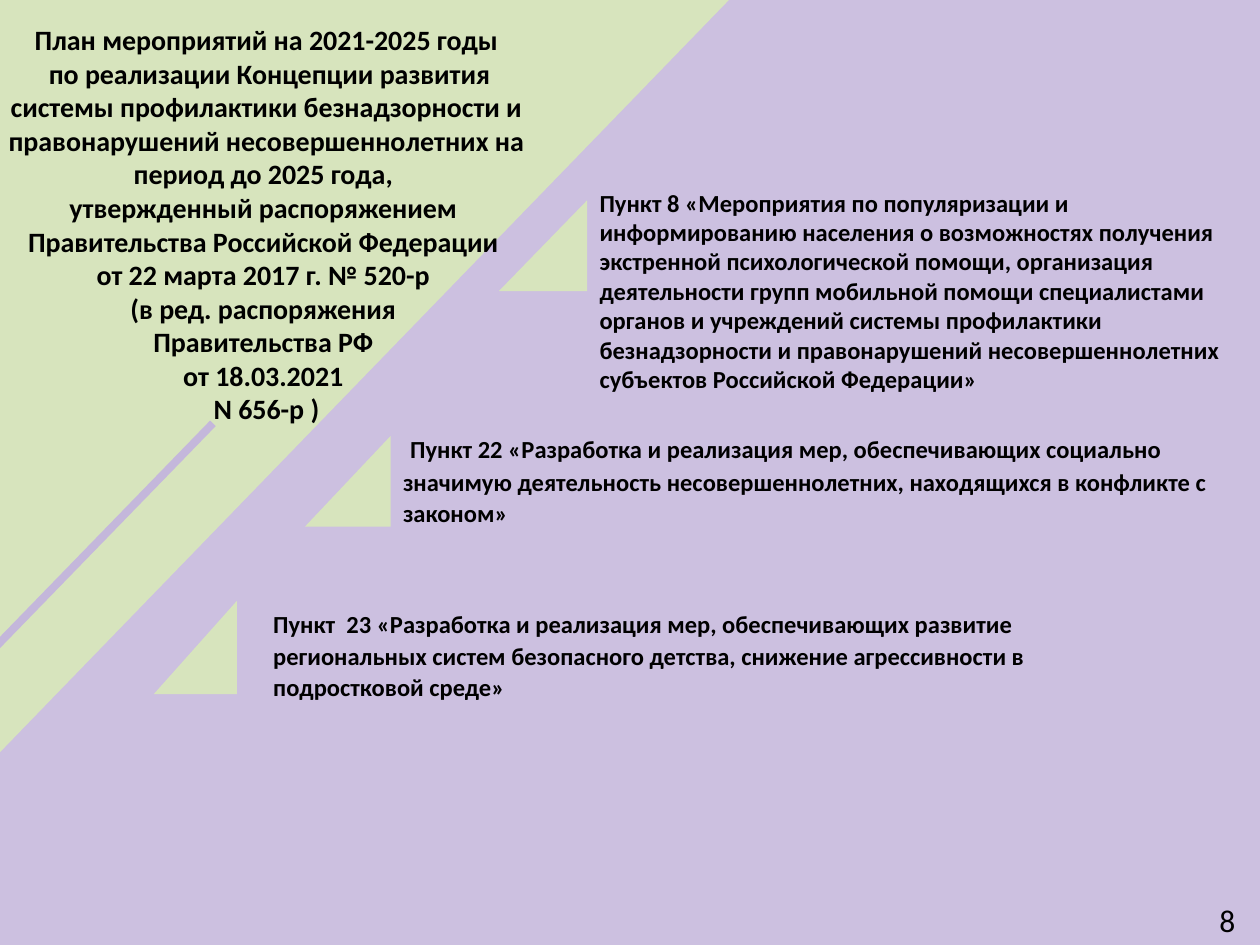
import dataclasses
import typing

import lxml.etree
import pptx
import pptx.dml.color
import pptx.enum.shapes
import pptx.enum.text
import pptx.oxml.ns
import pptx.util

LILAC = pptx.dml.color.RGBColor(0xCC, 0xC0, 0xE0)
VIOLET = pptx.dml.color.RGBColor(0xC4, 0xB7, 0xDB)
GREEN = pptx.dml.color.RGBColor(0xD7, 0xE4, 0xBD)
BLACK = pptx.dml.color.RGBColor(0, 0, 0)
FONT = "Calibri"

WIDTH = pptx.util.Inches(10)
HEIGHT = pptx.util.Inches(7.5)
COLUMNS, ROWS = 100, 75


@dataclasses.dataclass(frozen=True)
class Area:
    column: float
    row: float
    columns: float
    rows: float

    def box(self) -> tuple[int, int, int, int]:
        return (across(self.column), down(self.row),
                across(self.columns), down(self.rows))


@dataclasses.dataclass(frozen=True)
class Triangle:
    area: Area
    apex: float = 1
    rotation: float = 0


@dataclasses.dataclass(frozen=True)
class Passage:
    area: Area
    paragraphs: tuple[str, ...]
    size: int = 14
    bold: bool = True
    wrap: bool = True
    centred: bool = False
    leading: typing.Optional[int] = None
    indent_size: typing.Optional[int] = None


def across(columns: float) -> int:
    return round(WIDTH * columns / COLUMNS)


def down(rows: float) -> int:
    return round(HEIGHT * rows / ROWS)


TRIANGLES = (
    Triangle(Area(-28.1, -6.2, 83.8, 42.4), apex=0.51, rotation=314.1),
    Triangle(Area(39.6, 15.9, 7, 7.2)),
    Triangle(Area(24.2, 34.6, 6.8, 7.2)),
    Triangle(Area(12.2, 47.7, 6.6, 7.4)),
)

PASSAGES = (
    Passage(
        Area(46.6, 14.4, 53.5, 17.5),
        ("Пункт 8 «Мероприятия по популяризации и информированию населения "
         "о возможностях получения экстренной психологической помощи, "
         "организация деятельности групп мобильной помощи специалистами "
         "органов и учреждений системы профилактики безнадзорности и "
         "правонарушений несовершеннолетних субъектов Российской Федерации»",),
    ),
    Passage(
        Area(31, 33.9, 68.1, 8.6),
        ("Пункт 22 «Разработка и реализация мер, обеспечивающих социально "
         "значимую деятельность несовершеннолетних, находящихся в конфликте "
         "с законом»",),
        leading=18,
        indent_size=18,
    ),
    Passage(
        Area(20.7, 47.7, 69.3, 8.6),
        ("Пункт  23 «Разработка и реализация мер, обеспечивающих развитие "
         "региональных систем безопасного детства, снижение агрессивности "
         "в подростковой среде»",),
        leading=18,
    ),
    Passage(
        Area(-0.4, 1.3, 43.1, 33.3),
        ("План мероприятий на 2021-2025 годы",
         " по реализации Концепции развития системы профилактики "
         "безнадзорности и правонарушений несовершеннолетних на период "
         "до 2025 года, ",
         "утвержденный распоряжением ",
         "Правительства Российской Федерации ",
         "от 22 марта 2017 г. № 520-р ",
         "(в ред. распоряжения ",
         "Правительства РФ ",
         "от 18.03.2021 ",
         "N 656-р )"),
        size=16,
        centred=True,
    ),
    Passage(Area(95.8, 71, 3.3, 4), ("8",), size=18, bold=False, wrap=False),
)


def draw_triangle(slide: pptx.slide.Slide, triangle: Triangle) -> None:
    shape = slide.shapes.add_shape(
        pptx.enum.shapes.MSO_SHAPE.ISOSCELES_TRIANGLE, *triangle.area.box())
    shape.adjustments[0] = triangle.apex
    shape.rotation = triangle.rotation
    shape.shadow.inherit = False
    shape.fill.solid()
    shape.fill.fore_color.rgb = GREEN
    shape.line.fill.background()


def draw_stripe(slide: pptx.slide.Slide) -> None:
    stripe = slide.shapes.add_connector(
        pptx.enum.shapes.MSO_CONNECTOR.STRAIGHT,
        across(-0.4), down(51.4), across(16.9), down(33.6))
    stripe.line.color.rgb = VIOLET
    stripe.line.width = pptx.util.Pt(4.5)
    lxml.etree.SubElement(
        stripe._element.spPr, pptx.oxml.ns.qn("a:effectLst"))


def write_passage(slide: pptx.slide.Slide, passage: Passage) -> None:
    frame = slide.shapes.add_textbox(*passage.area.box()).text_frame
    frame.word_wrap = passage.wrap
    frame.auto_size = pptx.enum.text.MSO_AUTO_SIZE.SHAPE_TO_FIT_TEXT
    for index, text in enumerate(passage.paragraphs):
        paragraph = frame.add_paragraph() if index else frame.paragraphs[0]
        paragraph.font.name = FONT
        paragraph.font.size = pptx.util.Pt(passage.size)
        paragraph.font.bold = passage.bold
        paragraph.font.color.rgb = BLACK
        if passage.centred:
            paragraph.alignment = pptx.enum.text.PP_ALIGN.CENTER
        if passage.leading:
            paragraph.line_spacing = pptx.util.Pt(passage.leading)
        if passage.indent_size:
            indent = paragraph.add_run()
            indent.text = " "
            indent.font.size = pptx.util.Pt(passage.indent_size)
            indent.font.bold = False
        paragraph.add_run().text = text


def main() -> None:
    presentation = pptx.Presentation()
    presentation.slide_width = WIDTH
    presentation.slide_height = HEIGHT
    slide = presentation.slides.add_slide(presentation.slide_layouts[6])
    slide.background.fill.solid()
    slide.background.fill.fore_color.rgb = LILAC
    for triangle in TRIANGLES:
        draw_triangle(slide, triangle)
    draw_stripe(slide)
    for passage in PASSAGES:
        write_passage(slide, passage)
    presentation.save("out.pptx")


if __name__ == "__main__":
    main()
